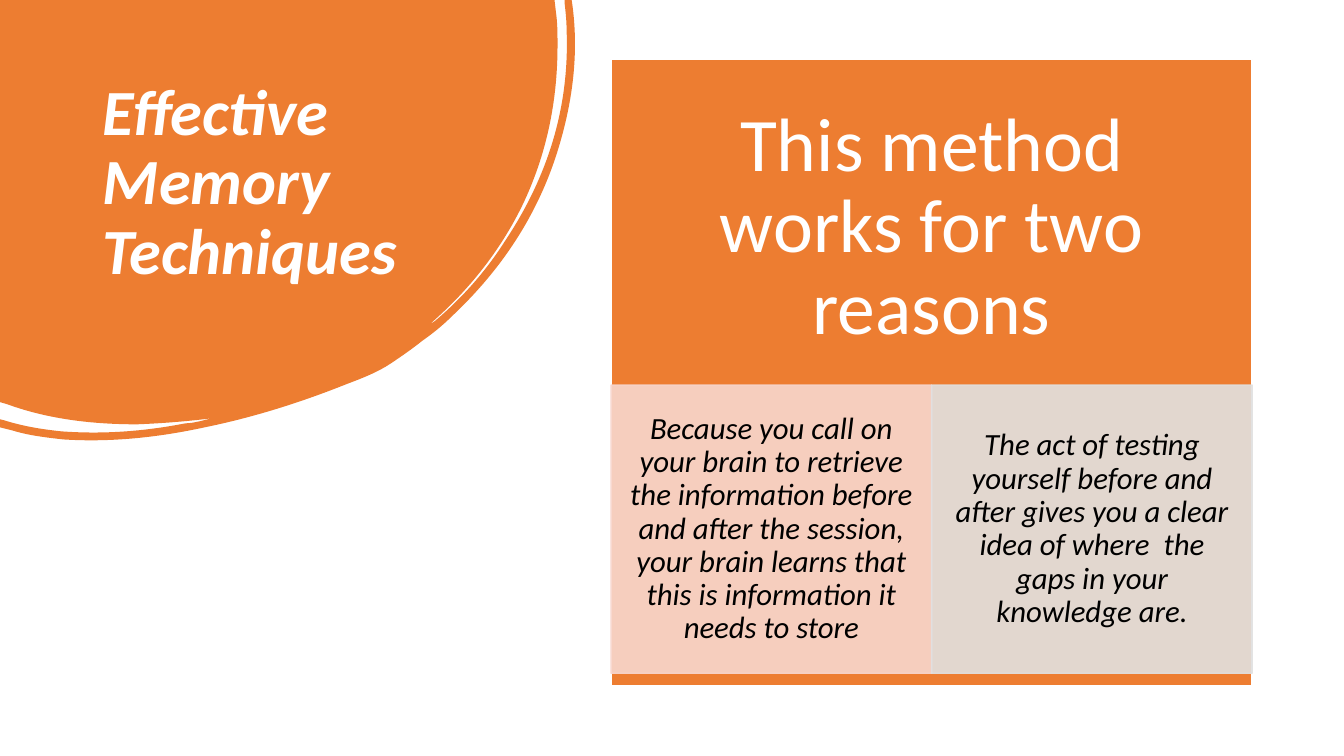
from lxml import etree
from pptx import Presentation
from pptx.dml.color import RGBColor
from pptx.enum.shapes import MSO_SHAPE
from pptx.enum.text import MSO_ANCHOR, PP_ALIGN
from pptx.oxml.ns import qn
from pptx.util import Pt

EMU_PER_PX = 9144
RECTANGLE = MSO_SHAPE.RECTANGLE
TOP, MIDDLE = MSO_ANCHOR.TOP, MSO_ANCHOR.MIDDLE
LEFT, CENTER = PP_ALIGN.LEFT, PP_ALIGN.CENTER
TITLE_ONLY = 5

FONT = "Calibri"
ORANGE, WHITE, BLACK = "ED7D31", "FFFFFF", "000000"

# Two numbers are a line to a point; six are a Bézier curve.
BLOB_SEGMENTS = [
    (550, 0), (552, 17),
    (553, 26, 553, 36, 553, 45), (553, 101, 542, 154, 518, 204),
    (496, 249, 465, 288, 427, 321), (429, 321, 430, 319, 432, 318),
    (459, 295, 482, 269, 501, 239), (543, 176, 565, 107, 562, 30),
    (562, 21, 561, 12, 560, 3),
    (560, 0), (567, 0), (568, 7),
    (574, 54, 568, 102, 553, 150), (533, 214, 497, 268, 448, 314),
    (439, 323, 429, 331, 419, 338), (409, 346, 399, 353, 387, 361),
    (375, 369, 360, 375, 344, 381), (299, 399, 252, 414, 203, 424),
    (157, 434, 110, 439, 63, 436), (45, 434, 28, 432, 12, 427),
    (0, 424), (0, 416), (4, 417),
    (23, 423, 42, 426, 61, 428), (103, 431, 143, 428, 184, 420),
    (189, 420, 193, 419, 198, 418), (202, 417, 206, 416, 210, 415),
    (186, 418, 161, 420, 136, 421), (92, 421, 48, 416, 7, 401),
    (0, 399),
]

REASONS = [
    ("F8D7CE", "Because you call on your brain to retrieve the information before "
               "and after the session, your brain learns that this is information "
               "it needs to store"),
    ("E1E1E1", "The act of testing yourself before and after gives you a clear "
               "idea of where  the gaps in your knowledge are."),
]


def px(length):
    return length * EMU_PER_PX


def color(hex_value):
    return RGBColor.from_string(hex_value)


def write_text(shape, text, size, hex_value, align, anchor=MIDDLE,
               margins=(10, 5), bold=False, italic=False):
    frame = shape.text_frame
    frame.word_wrap = True
    frame.vertical_anchor = anchor
    frame.margin_left = frame.margin_right = px(margins[0])
    frame.margin_top = frame.margin_bottom = px(margins[1])
    paragraph = frame.paragraphs[0]
    paragraph.alignment = align
    paragraph.line_spacing = 0.9
    run = paragraph.add_run()
    run.text = text
    font = run.font
    font.name, font.size = FONT, Pt(size)
    font.color.rgb = color(hex_value)
    font.bold, font.italic = bold, italic


def add_rectangle(slide, box, fill, line, opacity=100):
    shape = slide.shapes.add_shape(RECTANGLE, *map(px, box))
    shape.shadow.inherit = False
    shape.fill.solid()
    shape.fill.fore_color.rgb = color(fill)
    shape.line.color.rgb = color(line)
    shape.line.width = Pt(1)
    if opacity < 100:
        for element in shape.element.spPr.iter(qn("a:srgbClr")):
            etree.SubElement(element, qn("a:alpha"), val=str(opacity * 1000))
    return shape


def bend_segments(freeform, segments):
    """Turn the straight segments that have control points into curves."""
    lines = list(freeform.element.iter(qn("a:lnTo")))
    for line, segment in zip(lines, segments):
        if len(segment) == 6:
            curve = etree.Element(qn("a:cubicBezTo"))
            for x, y in zip(segment[::2], segment[1::2]):
                etree.SubElement(curve, qn("a:pt"), x=str(x), y=str(y))
            line.getparent().replace(line, curve)


def add_blob(slide, left, top, width, height):
    builder = slide.shapes.build_freeform(0, 0, scale=EMU_PER_PX)
    builder.add_line_segments([segment[-2:] for segment in BLOB_SEGMENTS], close=True)
    blob = builder.convert_to_shape(px(left), px(top))
    bend_segments(blob, BLOB_SEGMENTS)
    blob.width, blob.height = px(width), px(height)
    outline = next(blob.element.iter(qn("a:path")))
    outline.set("w", str(width))
    outline.set("h", str(height))
    blob.shadow.inherit = False
    blob.fill.solid()
    blob.fill.fore_color.rgb = color(ORANGE)
    blob.line.fill.background()


def place_title(slide, left, top, width, height):
    title = slide.shapes.title
    title.left, title.top, title.width, title.height = map(px, (left, top, width, height))
    write_text(title, "Effective Memory Techniques", 46, WHITE, LEFT, TOP,
               bold=True, italic=True)
    # Bring the title in front of the blob.
    title.element.getparent().append(title.element)


def add_reasons_panel(slide, left, top, width, height):
    add_rectangle(slide, (left, top, width, height), ORANGE, WHITE)
    headline = slide.shapes.add_textbox(*map(px, (left, top, width, 335)))
    write_text(headline, "This method works for two reasons", 54, WHITE, CENTER,
               margins=(42, 42))
    cell_width = width // len(REASONS)
    for index, (fill, text) in enumerate(REASONS):
        box = (left + index * cell_width, top + 323, cell_width, 286)
        cell = add_rectangle(slide, box, fill, fill, opacity=90)
        write_text(cell, text, 22, BLACK, CENTER, margins=(17, 3), italic=True)


def main():
    presentation = Presentation()
    presentation.slide_width, presentation.slide_height = px(1333), px(750)
    slide = presentation.slides.add_slide(presentation.slide_layouts[TITLE_ONLY])
    add_blob(slide, 0, 0, 571, 437)
    place_title(slide, 92, 74, 352, 222)
    add_reasons_panel(slide, 606, 59, 636, 621)
    presentation.save("out.pptx")


if __name__ == "__main__":
    main()
